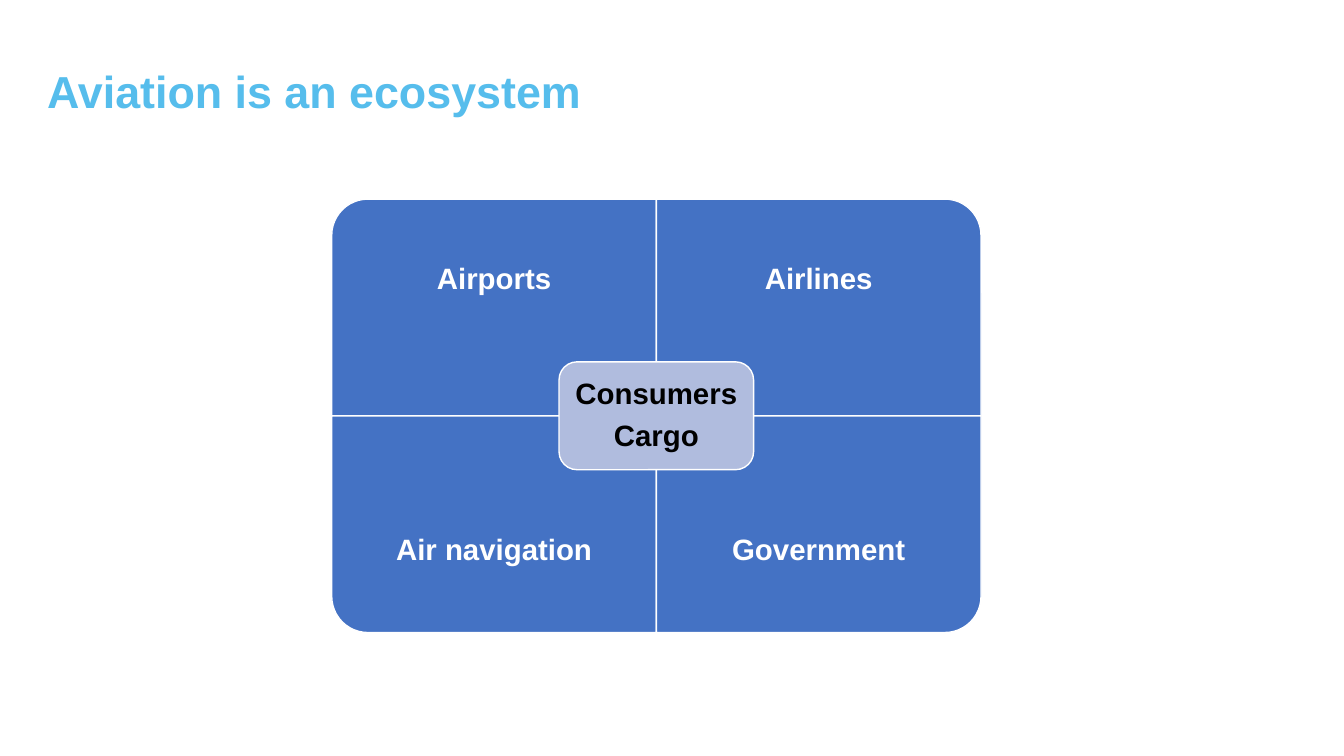
from dataclasses import dataclass

from pptx import Presentation
from pptx.dml.color import RGBColor
from pptx.enum.shapes import MSO_SHAPE
from pptx.enum.text import MSO_ANCHOR, PP_ALIGN
from pptx.slide import Slide
from pptx.util import Inches, Pt

MID_X, MID_Y = 6.51, 4.125
TILE_W, TILE_H = 3.22, 2.15
LABEL_H = 1.61
HUB_W, HUB_H = 1.93, 1.07
WHITE, BLACK, BLUE, PALE, SKY = "FFFFFF", "000000", "4472C4", "B0BCDE", "56BDEC"


@dataclass
class Tile:
    label: str
    col: int
    row: int
    turn: int


TILES = [
    Tile("Airports", 0, 0, 270),
    Tile("Airlines", 1, 0, 0),
    Tile("Air navigation", 0, 1, 180),
    Tile("Government", 1, 1, 90),
]


def color(code: str) -> RGBColor:
    return RGBColor.from_string(code)


def add_panel(slide: Slide, kind: MSO_SHAPE, mid_x: float, mid_y: float,
              width: float, height: float, fill: str, turn: int = 0) -> None:
    panel = slide.shapes.add_shape(
        kind, Inches(mid_x - width / 2), Inches(mid_y - height / 2),
        Inches(width), Inches(height))
    panel.rotation = turn
    panel.shadow.inherit = False
    panel.fill.solid()
    panel.fill.fore_color.rgb = color(fill)
    panel.line.color.rgb = color(WHITE)
    panel.line.width = Pt(1)


def add_text(slide: Slide, lines: list[str], left: float, top: float,
             width: float, height: float, ink: str, size: float = 21,
             align: PP_ALIGN = PP_ALIGN.CENTER, inset: float = 0.09) -> None:
    box = slide.shapes.add_textbox(
        Inches(left), Inches(top), Inches(width), Inches(height))
    frame = box.text_frame
    frame.word_wrap = True
    frame.vertical_anchor = MSO_ANCHOR.MIDDLE
    frame.margin_left = frame.margin_right = Inches(inset)
    frame.margin_top = frame.margin_bottom = Inches(inset)
    for index, line in enumerate(lines):
        para = frame.add_paragraph() if index else frame.paragraphs[0]
        para.alignment = align
        para.line_spacing = 0.9
        para.space_before = Pt(0.35 * size if index else 0)
        run = para.add_run()
        run.text = line
        run.font.name = "Arial"
        run.font.size = Pt(size)
        run.font.bold = True
        run.font.color.rgb = color(ink)


def add_tile(slide: Slide, tile: Tile) -> None:
    left = MID_X + (tile.col - 1) * TILE_W
    top = MID_Y + (tile.row - 1) * TILE_H
    upright = tile.turn % 180 == 90
    width, height = (TILE_H, TILE_W) if upright else (TILE_W, TILE_H)
    add_panel(slide, MSO_SHAPE.ROUND_1_RECTANGLE, left + TILE_W / 2,
              top + TILE_H / 2, width, height, BLUE, tile.turn)
    add_text(slide, [tile.label], left, top + tile.row * (TILE_H - LABEL_H),
             TILE_W, LABEL_H, WHITE, inset=0.16)


def main() -> None:
    deck = Presentation()
    deck.slide_width, deck.slide_height = Inches(13.33), Inches(7.5)
    slide = deck.slides.add_slide(deck.slide_layouts[6])
    add_text(slide, ["Aviation is an ecosystem"], 0.37, 0.43, 12.42, 1, SKY,
             size=32, align=PP_ALIGN.LEFT, inset=0.1)
    for tile in TILES:
        add_tile(slide, tile)
    add_panel(slide, MSO_SHAPE.ROUNDED_RECTANGLE, MID_X, MID_Y, HUB_W, HUB_H, PALE)
    add_text(slide, ["Consumers", "Cargo"], MID_X - HUB_W / 2 + 0.05,
             MID_Y - HUB_H / 2 + 0.05, HUB_W - 0.1, HUB_H - 0.1, BLACK)
    deck.save("out.pptx")


if __name__ == "__main__":
    main()
